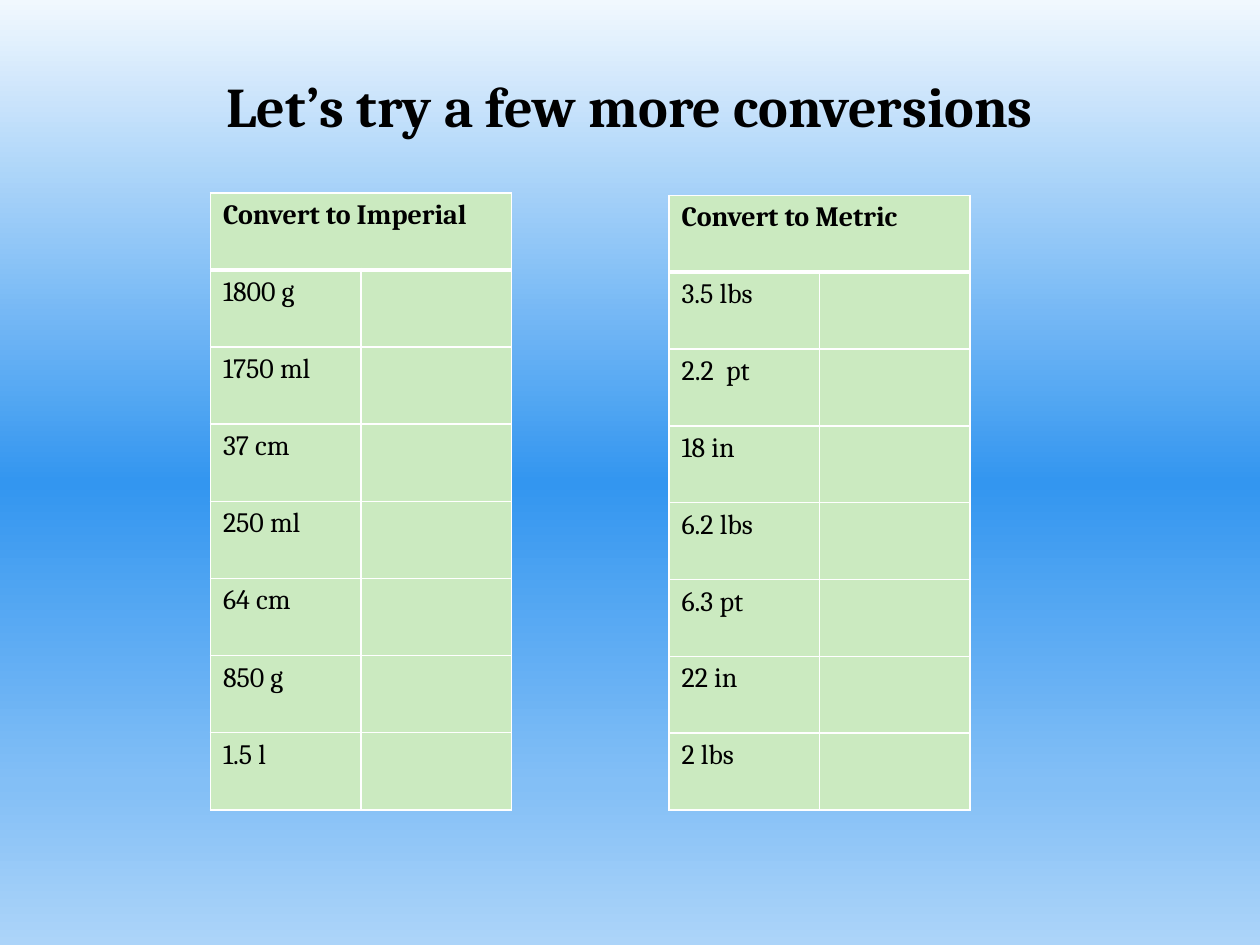
from lxml.etree import SubElement
from pptx import Presentation
from pptx.dml.color import RGBColor
from pptx.enum.text import PP_ALIGN
from pptx.oxml.ns import qn
from pptx.util import Inches, Pt

COLORS = {
    "text": "000000",
    "cell": "CBEAC0",
    "border": "FFFFFF",
}
BACKGROUND_STOPS = [(0, "F1F8FE"), (51, "3396F0"), (83, "83BFF6"), (100, "ACD4F9")]
IMPERIAL = ["1800 g", "1750 ml", "37 cm", "250 ml", "64 cm", "850 g", "1.5 l"]
METRIC = ["3.5 lbs", "2.2  pt", "18 in", "6.2 lbs", "6.3 pt", "22 in", "2 lbs"]


class SlideBuilder:
    font = "Cambria"
    title_size = 32
    table_size = 16

    def __init__(self, slide):
        self.slide = slide

    def background(self, stops):
        """Fill the background with a top-to-bottom gradient of (percent, colour) stops."""
        fill = self.slide.background.fill
        fill.gradient()
        fill.gradient_angle = 270
        gs_list = next(self.slide.element.iter(qn("a:gsLst")))
        for gs in list(gs_list):
            gs_list.remove(gs)
        for percent, color in stops:
            gs = SubElement(gs_list, qn("a:gs"), pos=str(percent * 1000))
            SubElement(gs, qn("a:srgbClr"), val=color)

    def format_text(self, tf, size, bold):
        for p in tf.paragraphs:
            for r in p.runs:
                r.font.name = self.font
                r.font.size = Pt(size)
                r.font.bold = bold
                r.font.color.rgb = RGBColor.from_string(COLORS["text"])

    def title(self, text, left, top, width, height):
        box = self.slide.shapes.add_textbox(
            Inches(left), Inches(top), Inches(width), Inches(height))
        tf = box.text_frame
        tf.word_wrap = True
        tf.text = text
        tf.paragraphs[0].alignment = PP_ALIGN.CENTER
        self.format_text(tf, self.title_size, True)

    def borders(self, cell, top, bottom):
        """Draw the four cell borders; top and bottom are widths in points."""
        tc_pr = cell._tc.get_or_add_tcPr()
        for tag, width in (("lnL", 1), ("lnR", 1), ("lnT", top), ("lnB", bottom)):
            ln = SubElement(tc_pr, qn(f"a:{tag}"), w=str(Pt(width)))
            fill = SubElement(ln, qn("a:solidFill"))
            SubElement(fill, qn("a:srgbClr"), val=COLORS["border"])

    def table(self, heading, amounts, left, top, width, height):
        """Add a table with a merged heading, the amounts and an empty answer column."""
        rows = [heading] + amounts
        table = self.slide.shapes.add_table(
            len(rows), 2, Inches(left), Inches(top), Inches(width), Inches(height)).table
        for i, text in enumerate(rows):
            for cell in table.rows[i].cells:
                self.borders(cell, top=3 if i == 1 else 1, bottom=3 if i == 0 else 1)
                cell.fill.solid()
                cell.fill.fore_color.rgb = RGBColor.from_string(COLORS["cell"])
            cell = table.cell(i, 0)
            cell.text_frame.text = text
            self.format_text(cell.text_frame, self.table_size, i == 0)
        table.cell(0, 0).merge(table.cell(0, 1))


def main():
    prs = Presentation()
    prs.slide_width, prs.slide_height = Inches(10), Inches(7.5)
    builder = SlideBuilder(prs.slides.add_slide(prs.slide_layouts[6]))
    builder.background(BACKGROUND_STOPS)
    builder.title("Let’s try a few more conversions", 0, 0.52, 10, 0.64)
    builder.table("Convert to Imperial", IMPERIAL, 1.67, 1.53, 2.39, 4.9)
    builder.table("Convert to Metric", METRIC, 5.31, 1.55, 2.39, 4.88)
    prs.save("out.pptx")


if __name__ == "__main__":
    main()
